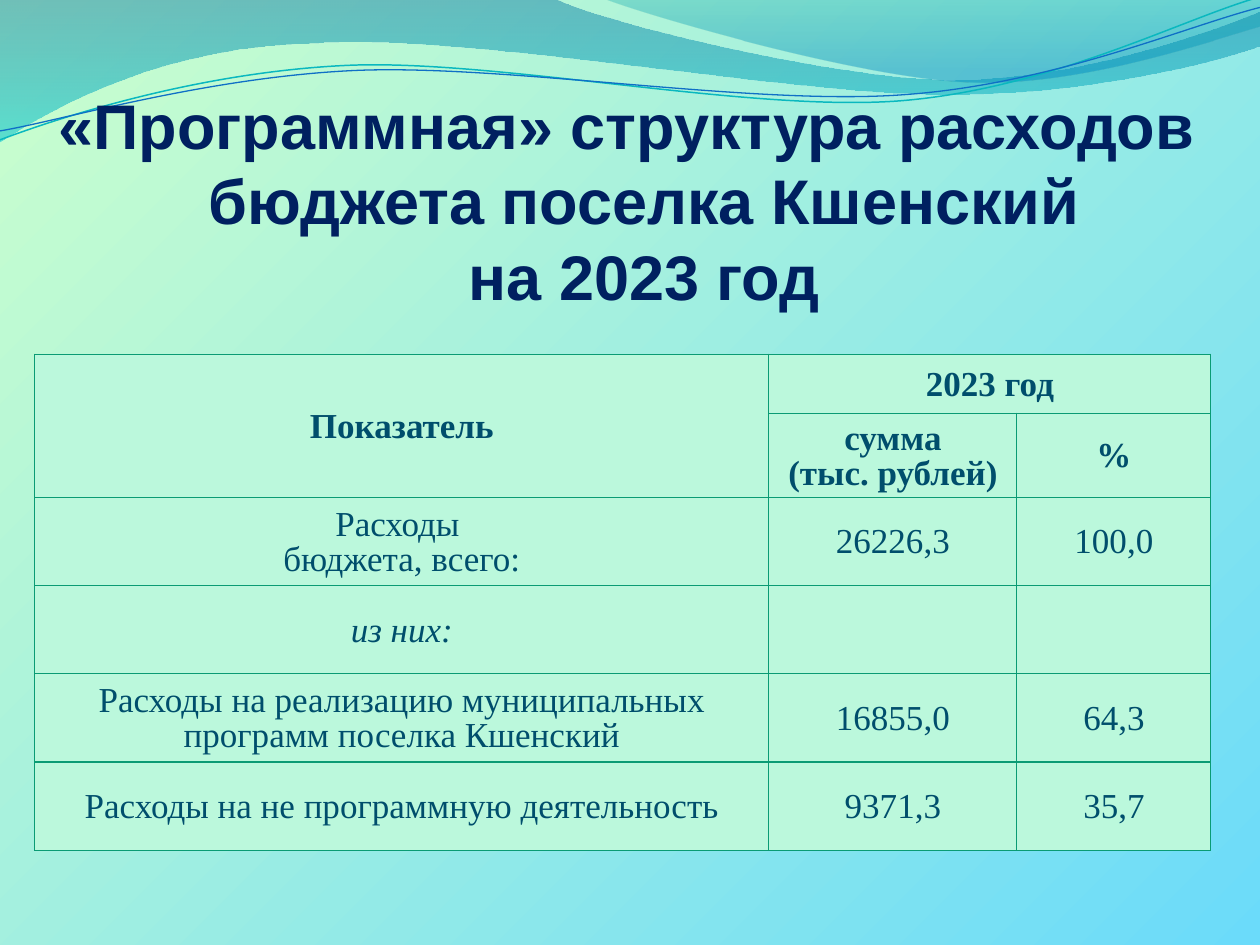
from lxml.etree import SubElement
from pptx import Presentation
from pptx.dml.color import RGBColor
from pptx.enum.text import MSO_ANCHOR as Anchor, MSO_AUTO_SIZE as AutoSize, PP_ALIGN as Align
from pptx.oxml.ns import qn
from pptx.util import Cm, Pt

# Each wave is a start point and steps: 2 numbers make a line, 6 a Bézier curve (cm).
FILLED_WAVES = [
    ((0, 0),
     [(11.18, -0.03),
      (12.09, 0.43, 16.87, 1.6, 19.25, 1.6),
      (21.67, 1.6, 24.33, 0.66, 25.4, 0.23),
      (25.43, 0.91),
      (24.97, 1.12, 22.1, 1.93, 18.95, 1.9),
      (15.8, 1.9, 9.7, 0.71, 6.53, 0.86),
      (3.28, 0.91, 1.17, 2.11, -0.03, 2.87),
      (0, 0)],
     [(0, "0074A1", 45), (100, "00C6CF", 55)]),
    ((12.17, -0.03),
     [(12.93, 0.28, 17.32, 1.57, 19.53, 1.65),
      (21.74, 1.75, 24.41, 0.81, 25.4, 0.53),
      (25.4, 0),
      (12.17, -0.03)],
     [(0, "00A1A9", 30), (80, "008BBF", 45)]),
]
LINE_WAVES = [
    ((-0.05, 2.22),
     [(1.19, 1.82, 4.02, 1.04, 7.05, 1.05),
      (10.05, 1.07, 15.02, 2.37, 18.08, 2.29),
      (21.13, 2.2, 23.87, 0.91, 25.41, 0.55)],
     "0AB8BF", 0.85),
    ((-0.04, 2.04),
     [(1.16, 1.9, 4.18, 1.15, 7.2, 1.16),
      (10.25, 1.18, 15.13, 2.25, 18.18, 2.17),
      (21.21, 2.1, 23.93, 1.06, 25.45, 0.75)],
     "0F6FC6", 0.75),
]
LINE_ROTATION = 357.3

TITLE = "«Программная» структура расходов \v бюджета поселка Кшенский\v на 2023 год"
COLUMN_WIDTHS = [14.8, 5, 3.91]
ROW_HEIGHTS = [1.19, 1.37] + [1.78] * 4
HEADER_ROWS = 2
ROWS = [
    ["Показатель", "2023 год", ""],
    ["", "сумма\n(тыс. рублей)", "%"],
    ["Расходы \nбюджета, всего:", "26226,3", "100,0"],
    ["из них:", "", ""],
    ["Расходы на реализацию муниципальных программ поселка Кшенский", "16855,0", "64,3"],
    ["Расходы на не программную деятельность", "9371,3", "35,7"],
]


def color(hex_string):
    return RGBColor.from_string(hex_string)


def set_all(target, values):
    for name, value in values.items():
        setattr(target, name, value)


def add_color(parent, hex_string, alpha=100):
    node = SubElement(parent, qn("a:srgbClr"), val=hex_string)
    if alpha < 100:
        SubElement(node, qn("a:alpha"), val=str(alpha * 1000))


def write_gradient(owner, stops, from_corner=False):
    """Fill the owner's gradient: downwards, or round the bottom right corner."""
    gradient = next(owner.iter(qn("a:gradFill")))
    for child in list(gradient):
        gradient.remove(child)
    stop_list = SubElement(gradient, qn("a:gsLst"))
    for position, hex_string, alpha in stops:
        stop = SubElement(stop_list, qn("a:gs"), pos=str(position * 1000))
        add_color(stop, hex_string, alpha)
    if from_corner:
        path = SubElement(gradient, qn("a:path"))
        path.set("path", "circle")
        SubElement(path, qn("a:fillToRect"), l="100000", t="100000")
    else:
        SubElement(gradient, qn("a:lin"), ang="5400000", scaled="1")


def bend(shape, steps):
    """Join the three line segments of each curved step into one Bézier curve."""
    segments = iter(list(shape.element.iter(qn("a:lnTo"))))
    for step in steps:
        first, *others = [next(segments) for _ in range(len(step) // 2)]
        if others:
            curve = first.makeelement(qn("a:cubicBezTo"))
            first.addprevious(curve)
            for segment in (first, *others):
                curve.append(segment[0])
                segment.getparent().remove(segment)


class BudgetSlide:
    title_font = {"name": "Arial", "size": Pt(36), "bold": True}
    table_font = {"name": "Times New Roman", "size": Pt(20)}
    title_color = "002060"
    text_color = "004E6C"
    cell_color = "BBF8DC"
    border_color = "0A9B74"

    def __init__(self, presentation):
        self.slide = presentation.slides.add_slide(presentation.slide_layouts[5])
        self.master_tree = presentation.slide_master.shapes.element

    def background(self, stops):
        self.slide.background.fill.gradient()
        write_gradient(self.slide.element, stops, from_corner=True)

    def wave(self, start, steps, closed):
        """Draw a wave and hand it to the slide master."""
        points = [(Cm(x), Cm(y)) for step in steps for x, y in zip(step[::2], step[1::2])]
        builder = self.slide.shapes.build_freeform(Cm(start[0]), Cm(start[1]), scale=1)
        builder.add_line_segments(points, close=closed)
        shape = builder.convert_to_shape()
        bend(shape, steps)
        shape.shadow.inherit = False
        self.master_tree.append(shape.element)
        return shape

    def filled_wave(self, start, steps, stops):
        shape = self.wave(start, steps, closed=True)
        shape.line.fill.background()
        shape.fill.gradient()
        write_gradient(shape.element, stops)

    def line_wave(self, start, steps, hex_string, width):
        shape = self.wave(start, steps, closed=False)
        shape.rotation = LINE_ROTATION
        shape.fill.background()
        shape.line.color.rgb = color(hex_string)
        shape.line.width = Pt(width)

    def title(self, text):
        title = self.slide.shapes.title
        set_all(title, {"left": Cm(0.71), "top": Cm(1.52), "width": Cm(24.2), "height": Cm(5)})
        set_all(title.text_frame, {"text": text, "word_wrap": True,
                                   "auto_size": AutoSize.NONE, "vertical_anchor": Anchor.MIDDLE})
        paragraph = title.text_frame.paragraphs[0]
        paragraph.alignment = Align.CENTER
        for run in paragraph.runs:
            set_all(run.font, self.title_font)
            run.font.color.rgb = color(self.title_color)

    def table(self, rows):
        frame = self.slide.shapes.add_table(
            len(rows), len(COLUMN_WIDTHS), Cm(0.7), Cm(7.14),
            Cm(sum(COLUMN_WIDTHS)), Cm(sum(ROW_HEIGHTS)))
        table = frame.table
        set_all(table, {"first_row": False, "horz_banding": False})
        for column, width in zip(table.columns, COLUMN_WIDTHS):
            column.width = Cm(width)
        for row, height in zip(table.rows, ROW_HEIGHTS):
            row.height = Cm(height)
        for row_index, row in enumerate(rows):
            for column_index, text in enumerate(row):
                self.cell(table.cell(row_index, column_index), text, row_index)
        table.cell(0, 0).merge(table.cell(1, 0))
        table.cell(0, 1).merge(table.cell(0, 2))

    def cell(self, cell, text, row_index):
        side, top = (0.15, 0.23) if row_index == 0 else (0.1, 0.18)
        set_all(cell, {"text": text, "vertical_anchor": Anchor.MIDDLE, "margin_top": Cm(top),
                       "margin_left": Cm(side), "margin_right": Cm(side),
                       "margin_bottom": Cm(side)})
        self.borders(cell)
        cell.fill.solid()
        cell.fill.fore_color.rgb = color(self.cell_color)
        for paragraph in cell.text_frame.paragraphs:
            set_all(paragraph, {"alignment": Align.CENTER, "line_spacing": 0.9})
            for run in paragraph.runs:
                set_all(run.font, self.table_font)
                set_all(run.font, {"bold": row_index < HEADER_ROWS, "italic": text == "из них:"})
                run.font.color.rgb = color(self.text_color)

    def borders(self, cell):
        properties = cell._tc.get_or_add_tcPr()
        for edge in ("lnL", "lnR", "lnT", "lnB"):
            line = SubElement(properties, qn(f"a:{edge}"), w=str(Pt(0.75)))
            add_color(SubElement(line, qn("a:solidFill")), self.border_color)


def main():
    presentation = Presentation()
    set_all(presentation, {"slide_width": Cm(25.4), "slide_height": Cm(19.05)})
    page = BudgetSlide(presentation)
    page.background([(0, "6BDBFA", 100), (100, "CCFFCC", 100)])
    for wave in FILLED_WAVES:
        page.filled_wave(*wave)
    for wave in LINE_WAVES:
        page.line_wave(*wave)
    page.title(TITLE)
    page.table(ROWS)
    presentation.save("out.pptx")


if __name__ == "__main__":
    main()
